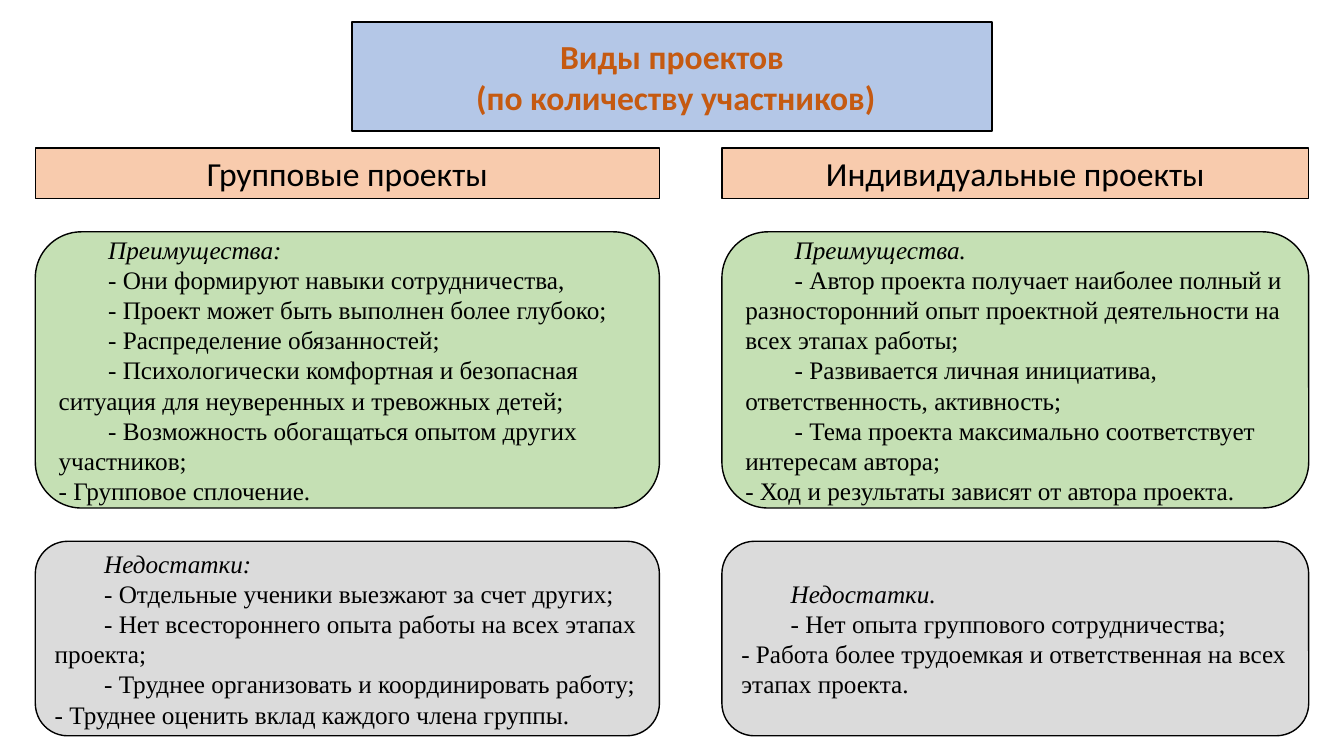
from lxml import etree
from pptx import Presentation
from pptx.dml.color import RGBColor
from pptx.enum.shapes import MSO_SHAPE
from pptx.enum.text import MSO_ANCHOR, MSO_AUTO_SIZE, PP_ALIGN
from pptx.oxml.ns import qn
from pptx.util import Inches, Pt

RECT = MSO_SHAPE.RECTANGLE
ROUND_RECT = MSO_SHAPE.ROUNDED_RECTANGLE
MIDDLE = MSO_ANCHOR.MIDDLE
NO_AUTOFIT = MSO_AUTO_SIZE.NONE
LEFT = PP_ALIGN.LEFT
CENTER = PP_ALIGN.CENTER

BLACK = "000000"
BLUE = "B4C7E7"
ORANGE = "C55A11"
PEACH = "F8CBAD"
GREEN = "C5E0B4"
GRAY = "DBDBDB"

HEADING_ROW = (1.47, 0.5)
PROS_ROW = (2.3, 2.74)
CONS_ROW = (5.37, 1.93)
FIRST_LINE = 0.49

COLUMNS = [
    (0.35, 6.19, "Групповые проекты",
     ["Преимущества:",
      "- Они формируют навыки сотрудничества,",
      "- Проект может быть выполнен более глубоко;",
      "- Распределение обязанностей;",
      "- Психологически комфортная и безопасная ситуация для неуверенных и тревожных детей;",
      "- Возможность обогащаться опытом других участников;",
      "- Групповое сплочение."],
     ["Недостатки:",
      "- Отдельные ученики выезжают за счет других;",
      "- Нет всестороннего опыта работы на всех этапах проекта;",
      "- Труднее организовать и координировать работу;",
      "- Труднее оценить вклад каждого члена группы."]),
    (7.16, 5.82, "Индивидуальные проекты",
     ["Преимущества.",
      "- Автор проекта получает наиболее полный и разносторонний опыт проектной деятельности на всех этапах работы;",
      "- Развивается личная инициатива, ответственность, активность;",
      "- Тема проекта максимально соответствует интересам автора;",
      "- Ход и результаты зависят от автора проекта."],
     ["Недостатки.",
      "- Нет опыта группового сотрудничества;",
      "- Работа более трудоемкая и ответственная на всех этапах проекта."]),
]


def rgb(color):
    return RGBColor.from_string(color)


def paint(sp, fill):
    sp.fill.solid()
    sp.fill.fore_color.rgb = rgb(fill)
    sp.line.color.rgb = rgb(BLACK)
    sp.line.width = Pt(1)


def prepare_text(sp):
    tf = sp.text_frame
    tf.word_wrap = True
    tf.auto_size = NO_AUTOFIT
    tf.vertical_anchor = MIDDLE
    return tf


def add_paragraph(tf, index, text, align, font, size, color, bold=False, italic=False):
    p = tf.add_paragraph() if index else tf.paragraphs[0]
    p.alignment = align
    r = p.add_run()
    r.text = text
    r.font.name = font
    r.font.size = Pt(size)
    r.font.bold = bold
    r.font.italic = italic
    r.font.color.rgb = rgb(color)
    return p


def indent_first_line(p):
    pPr = p._p.get_or_add_pPr()
    pPr.set("marL", "0")
    pPr.set("indent", str(Inches(FIRST_LINE)))


def set_title(s, lines):
    sp = s.shapes.title
    sp.left, sp.top = Inches(3.49), Inches(0.22)
    sp.width, sp.height = Inches(6.35), Inches(1.08)
    geom = etree.SubElement(sp._element.spPr, qn("a:prstGeom"), prst="ellipse")
    etree.SubElement(geom, qn("a:avLst"))
    paint(sp, BLUE)
    tf = prepare_text(sp)
    for i, line in enumerate(lines):
        add_paragraph(tf, i, line, CENTER, "Calibri", 24, ORANGE, bold=True)


def add_box(s, kind, left, width, row, fill):
    top, height = row
    sp = s.shapes.add_shape(kind, Inches(left), Inches(top), Inches(width), Inches(height))
    sp.shadow.inherit = False
    paint(sp, fill)
    return prepare_text(sp)


def add_heading(s, left, width, text):
    tf = add_box(s, RECT, left, width, HEADING_ROW, PEACH)
    add_paragraph(tf, 0, text, CENTER, "Calibri", 24, BLACK)


def add_card(s, left, width, row, fill, lines):
    tf = add_box(s, ROUND_RECT, left, width, row, fill)
    last = len(lines) - 1
    for i, line in enumerate(lines):
        p = add_paragraph(tf, i, line, LEFT, "Times New Roman", 18, BLACK, italic=i == 0)
        if i < last:
            indent_first_line(p)


def main():
    prs = Presentation()
    prs.slide_width, prs.slide_height = Inches(13.33), Inches(7.5)
    s = prs.slides.add_slide(prs.slide_layouts[5])
    set_title(s, ["Виды проектов", " (по количеству участников)"])
    for left, width, heading, pros, cons in COLUMNS:
        add_heading(s, left, width, heading)
        add_card(s, left, width, PROS_ROW, GREEN, pros)
        add_card(s, left, width, CONS_ROW, GRAY, cons)
    prs.save("out.pptx")


if __name__ == "__main__":
    main()
